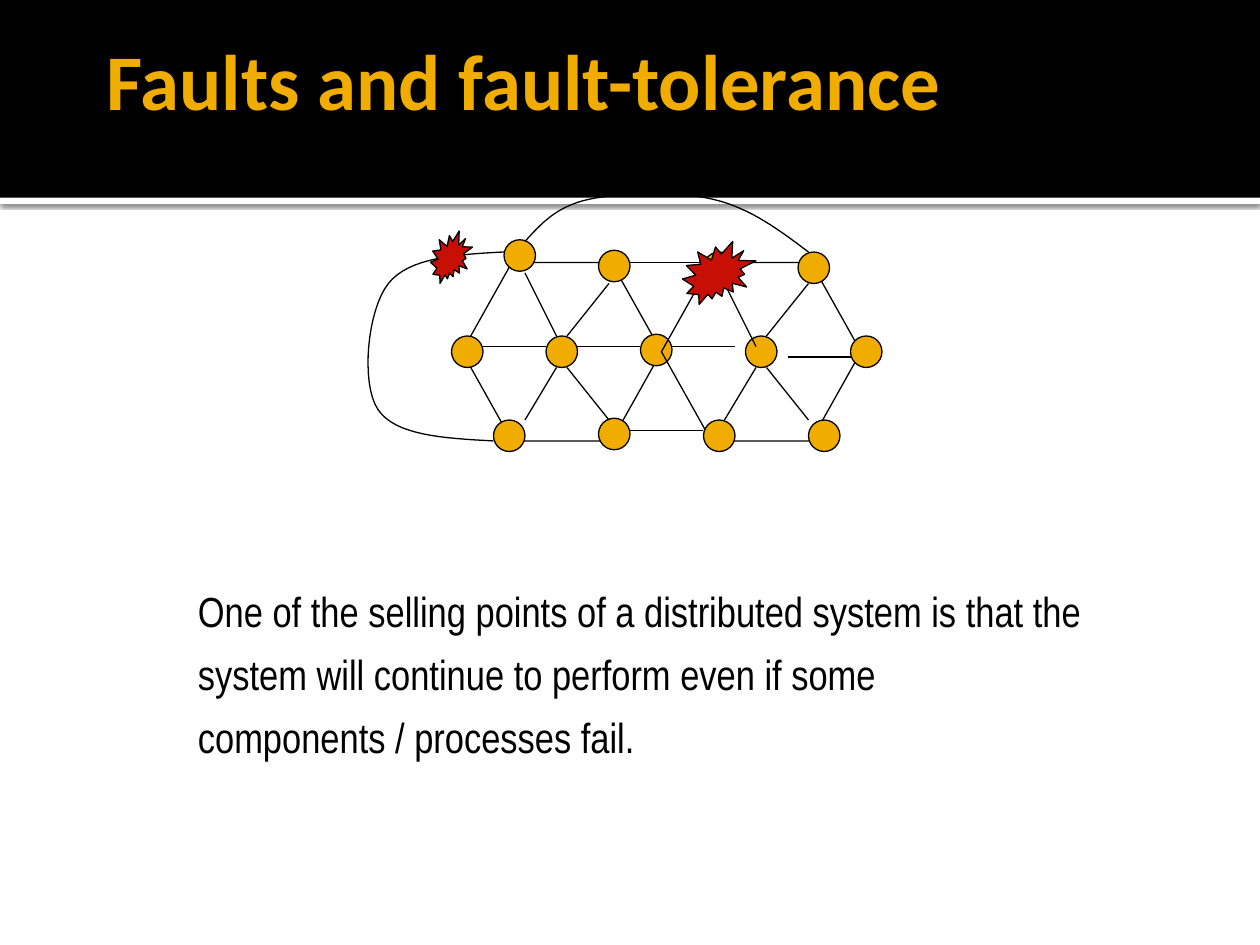
from dataclasses import dataclass

from lxml.etree import SubElement
from pptx import Presentation
from pptx.dml.color import RGBColor
from pptx.enum.shapes import MSO_CONNECTOR, MSO_SHAPE
from pptx.enum.text import MSO_ANCHOR
from pptx.oxml.ns import qn
from pptx.util import Pt


@dataclass(frozen=True)
class Theme:
    black: RGBColor = RGBColor(0, 0, 0)
    white: RGBColor = RGBColor(255, 255, 255)
    amber: RGBColor = RGBColor(0xF0, 0xAD, 0x00)
    red: RGBColor = RGBColor(0xC7, 0x0F, 0x05)
    title_font: str = "Calibri"
    body_font: str = "Arial Narrow"
    title_size: float = 45
    body_size: float = 24
    line_width: float = 0.75


theme = Theme()
deck = Presentation()
deck.slide_width, deck.slide_height = Pt(720), Pt(540)
page = deck.slides.add_slide(deck.slide_layouts[6])


def style(shape, fill=None, outlined=True):
    """Give a shape a flat fill, or none, and the thin black outline, or none."""
    shape.shadow.inherit = False
    if fill is None:
        shape.fill.background()
    else:
        shape.fill.solid()
        shape.fill.fore_color.rgb = fill
    if outlined:
        shape.line.color.rgb = theme.black
        shape.line.width = Pt(theme.line_width)
    else:
        shape.line.fill.background()


def add_text(area, text, insets, font, size, color):
    box = page.shapes.add_textbox(*map(Pt, area))
    frame = box.text_frame
    frame.word_wrap = True
    frame.margin_left, frame.margin_top, frame.margin_right, frame.margin_bottom = map(Pt, insets)
    frame.text = text
    span = frame.paragraphs[0].runs[0]
    span.font.name, span.font.size = font, Pt(size)
    span.font.color.rgb = color
    return frame


# Header with a shadowed white rule below it
rule = page.shapes.add_shape(MSO_SHAPE.RECTANGLE, 0, Pt(113), Pt(720), Pt(3.6))
style(rule, theme.white, outlined=False)
effects = rule._element.spPr.find(qn("a:effectLst"))
shadow = SubElement(effects, qn("a:outerShdw"), blurRad=str(Pt(2.5)), dist=str(Pt(0.8)),
                    dir="5400000", rotWithShape="0")
shadow_color = SubElement(shadow, qn("a:srgbClr"), val=str(theme.black))
SubElement(shadow_color, qn("a:alpha"), val="60000")

header = page.shapes.add_shape(MSO_SHAPE.RECTANGLE, 0, 0, Pt(720), Pt(113))
style(header, theme.black, outlined=False)

title = add_text((54, 0, 612, 90), "Faults and fault-tolerance", (7.2, 3.6, 3.6, 3.6),
                 theme.title_font, theme.title_size, theme.amber)
title.vertical_anchor = MSO_ANCHOR.MIDDLE
title.paragraphs[0].runs[0].font.bold = True

body = add_text(
    (71.3, 315.4, 558.7, 135.4),
    "One of the selling points of a distributed system is that the system will continue "
    "to perform even if some components / processes fail.",
    (41.8, 12.2, 7.2, 3.6), theme.body_font, theme.body_size, theme.black)
body.paragraphs[0].line_spacing = 1.25

# Network: two hexagonal clusters, each with its nodes and the spokes of its hub
clusters = [
    (264,
     [(312, 192), (366, 191), (342, 143), (258, 192), (282, 240), (342, 239), (288, 137)],
     [(318, 192, 300, 156), (324, 192, 348, 162), (330, 198, 366, 198),
      (324, 210, 348, 240), (318, 210, 300, 240), (312, 198, 276, 198)]),
    (378,
     [(426, 192), (486, 192), (456, 144), (402, 240), (462, 240), (402, 144)],
     [(432, 198, 414, 162), (438, 192, 462, 162), (450, 204, 486, 204),
      (438, 210, 462, 240), (432, 210, 414, 240), (420, 198, 384, 198),
      (360, 246, 402, 246), (402, 150, 360, 150)]),
]
for left, nodes, links in clusters:
    hexagon = page.shapes.add_shape(MSO_SHAPE.HEXAGON, Pt(left), Pt(150), Pt(114), Pt(102))
    hexagon.adjustments[0] = 0.28
    style(hexagon)
    for x, y in nodes:
        node = page.shapes.add_shape(MSO_SHAPE.OVAL, Pt(x), Pt(y), Pt(18), Pt(18))
        style(node, theme.amber)
    for ends in links:
        link = page.shapes.add_connector(MSO_CONNECTOR.STRAIGHT, *map(Pt, ends))
        link.line.color.rgb = theme.black
        link.line.width = Pt(theme.line_width)
        SubElement(link._element.spPr, qn("a:effectLst"))

# Long-distance links: each is a chain of cubic curves sharing their end points
curves = [
    [(300, 138), (309, 128), (318, 118), (336, 114), (354, 110), (387, 109),
     (408, 114), (429, 119), (446, 132), (462, 144)],
    [(288, 144), (261, 145.5), (234, 147), (222, 162), (210, 177), (206, 219),
     (216, 234), (226, 249), (254, 250.5), (282, 252)],
]
STEPS = 16
for controls in curves:
    points = []
    for first in range(0, len(controls) - 1, 3):
        for step in range(1, STEPS + 1):
            t = step / STEPS
            weights = ((1 - t) ** 3, 3 * t * (1 - t) ** 2, 3 * t ** 2 * (1 - t), t ** 3)
            points.append(tuple(
                Pt(sum(weight * point[axis]
                       for weight, point in zip(weights, controls[first:first + 4])))
                for axis in (0, 1)))
    builder = page.shapes.build_freeform(*map(Pt, controls[0]))
    builder.add_line_segments(points, close=False)
    style(builder.convert_to_shape())

# Faults
for area in [(390, 138, 42, 36), (246, 132, 24, 30)]:
    fault = page.shapes.add_shape(MSO_SHAPE.EXPLOSION2, *map(Pt, area))
    style(fault, theme.red)

deck.save("out.pptx")
